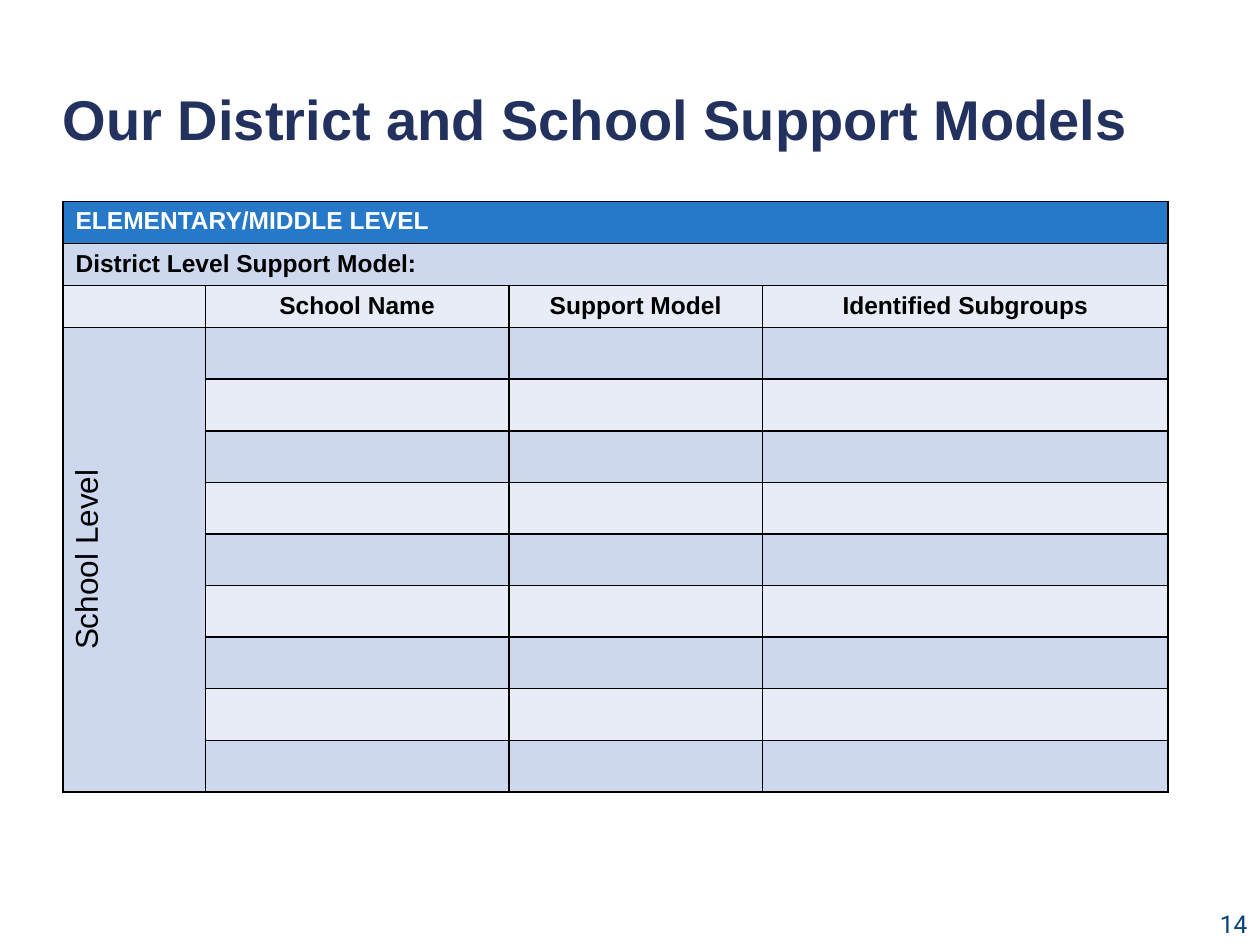
import pptx
import pptx.dml.color
import pptx.enum.text
import pptx.oxml
import pptx.util
from lxml import etree
from pptx.oxml.ns import qn

Cm = pptx.util.Cm
Pt = pptx.util.Pt
ALIGN = pptx.enum.text.PP_ALIGN
ANCHOR = pptx.enum.text.MSO_ANCHOR

NAVY, BLUE, TEAL = "22315E", "2678C9", "044178"
BAND_DARK, BAND_LIGHT = "CDD8EF", "E8ECF7"
BLACK, WHITE = "000000", "FFFFFF"

HEADINGS = ["School Name", "Support Model", "Identified Subgroups"]
COLUMN_WIDTHS = [2.87, 6.12, 5.11, 8.18]
HEADER_ROWS, SCHOOL_ROWS = 3, 9
HEADER_HEIGHT, SCHOOL_HEIGHT = 0.84, 1.04


def color(value):
    return pptx.dml.color.RGBColor.from_string(value)


def write(frame, text, size, ink, bold=False, font="Arial", align=ALIGN.LEFT):
    frame.text = text
    paragraph = frame.paragraphs[0]
    paragraph.alignment = align
    for run in paragraph.runs:
        run.font.name = font
        run.font.size = Pt(size)
        run.font.bold = bold
        run.font.color.rgb = color(ink)
    return paragraph


def add_text_box(slide, box):
    frame = slide.shapes.add_textbox(*[Cm(length) for length in box]).text_frame
    frame.word_wrap = True
    return frame


def add_title(slide, box):
    frame = add_text_box(slide, box)
    frame.vertical_anchor = ANCHOR.MIDDLE
    paragraph = write(frame, "Our District and School Support Models", 32, NAVY, bold=True)
    paragraph.line_spacing = Pt(36)


def add_slide_number(slide, box):
    write(add_text_box(slide, box), "14", 14, TEAL, font="Roboto", align=ALIGN.RIGHT)


def style_cell(cell, fill):
    # Borders come before the fill in the cell properties
    properties = cell._tc.get_or_add_tcPr()
    for side in ("lnL", "lnR", "lnT", "lnB"):
        line = etree.SubElement(properties, qn(f"a:{side}"), w=str(Pt(1)))
        solid = etree.SubElement(line, qn("a:solidFill"))
        etree.SubElement(solid, qn("a:srgbClr"), val=BLACK)
    cell.fill.solid()
    cell.fill.fore_color.rgb = color(fill)
    # Keep empty cells from stretching their row
    paragraph = cell.text_frame.paragraphs[0]
    etree.SubElement(paragraph._p, qn("a:endParaRPr"), sz="1400")


def add_support_table(slide, left, top):
    row_heights = [HEADER_HEIGHT] * HEADER_ROWS + [SCHOOL_HEIGHT] * SCHOOL_ROWS
    last_row, last_column = len(row_heights) - 1, len(COLUMN_WIDTHS) - 1
    table = slide.shapes.add_table(
        len(row_heights), len(COLUMN_WIDTHS), Cm(left), Cm(top),
        Cm(sum(COLUMN_WIDTHS)), Cm(sum(row_heights))).table
    table.first_row = False
    table.horz_banding = False
    for column, width in zip(table.columns, COLUMN_WIDTHS):
        column.width = Cm(width)

    # Blue top row, then alternating bands
    for index, (row, height) in enumerate(zip(table.rows, row_heights)):
        row.height = Cm(height)
        band = BAND_DARK if index % 2 else BAND_LIGHT
        for cell in row.cells:
            style_cell(cell, band if index else BLUE)

    # Full-width headers
    for index, (text, ink) in enumerate([("ELEMENTARY/MIDDLE LEVEL", WHITE),
                                         ("District Level Support Model:", BLACK)]):
        cell = table.cell(index, 0)
        cell.merge(table.cell(index, last_column))
        write(cell.text_frame, text, 14, ink, bold=True)

    # Column headings
    for index, heading in enumerate(HEADINGS, start=1):
        frame = table.cell(HEADER_ROWS - 1, index).text_frame
        write(frame, heading, 14, BLACK, bold=True, align=ALIGN.CENTER)

    # Rotated side label
    label = table.cell(HEADER_ROWS, 0)
    label.merge(table.cell(last_row, 0))
    write(label.text_frame, "School Level", 18, BLACK, align=ALIGN.CENTER)
    label.vertical_anchor = ANCHOR.MIDDLE
    label._tc.get_or_add_tcPr().set("vert", "vert270")


def main():
    presentation = pptx.Presentation()
    presentation.slide_width = Cm(25.4)
    presentation.slide_height = Cm(19.05)
    slide = presentation.slides.add_slide(presentation.slide_layouts[6])
    add_slide_number(slide, (19.48, 18.21, 5.92, 0.84))
    add_title(slide, (1.02, 1.47, 23.52, 1.9))
    add_support_table(slide, 1.27, 4.06)
    presentation.save("out.pptx")


if __name__ == "__main__":
    main()
